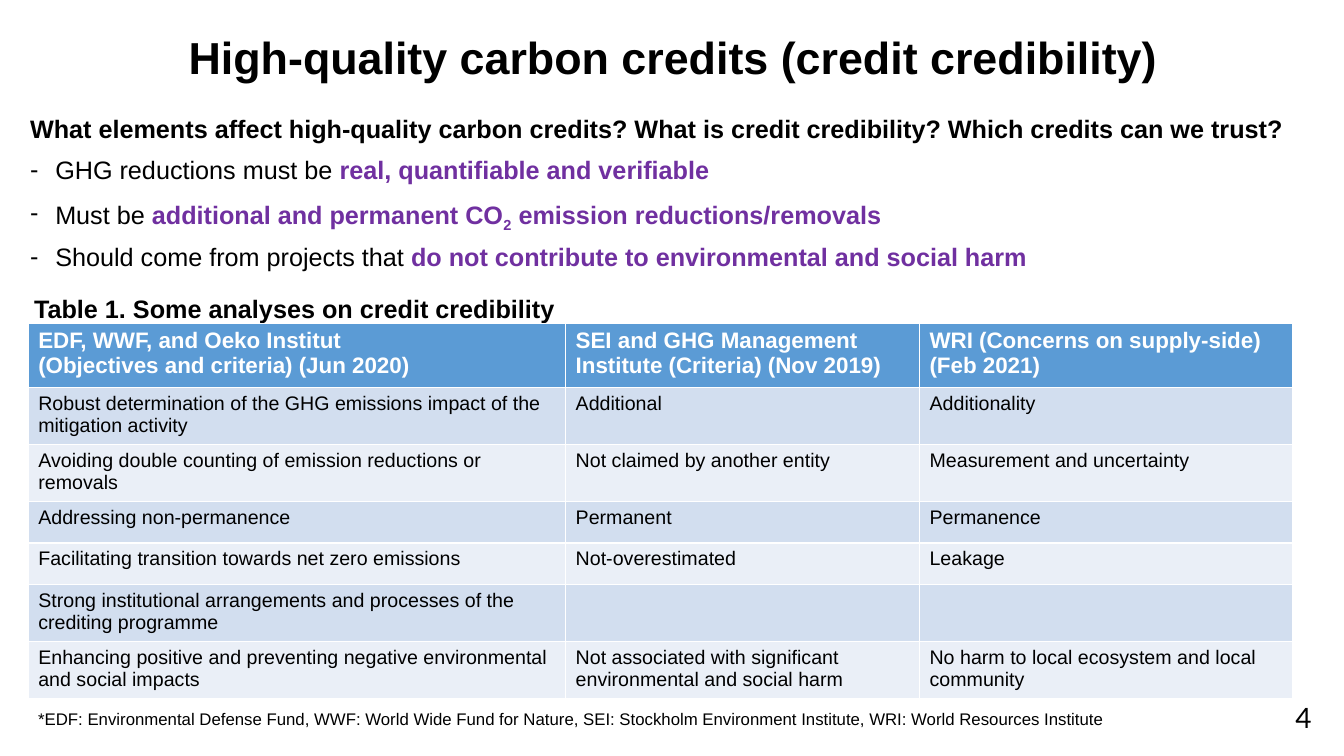
from lxml import etree
from pptx import Presentation
from pptx import util as u
from pptx.dml.color import RGBColor
from pptx.enum import text
from pptx.oxml.ns import qn

BLACK, WHITE, PURPLE = "000000", "FFFFFF", "7030A0"
HEADER_FILL, BAND_FILLS = "5B9BD5", ("D2DEEF", "EAEFF7")


def color(value):
    return RGBColor.from_string(value)


def add_run(paragraph, words, size, hex_color=BLACK, bold=False, name="Arial"):
    run = paragraph.add_run()
    run.text = words
    run.font.color.rgb = color(hex_color)
    for attribute, value in {"size": u.Pt(size), "bold": bold, "name": name}.items():
        setattr(run.font, attribute, value)
    return run


presentation = Presentation()
presentation.slide_width = u.Inches(13.33)
presentation.slide_height = u.Inches(7.5)
slide = presentation.slides.add_slide(presentation.slide_layouts[5])

title = slide.shapes.title
for attribute, value in {"left": 0.68, "top": 0.29, "width": 12, "height": 0.61}.items():
    setattr(title, attribute, u.Inches(value))
title.text_frame.vertical_anchor = text.MSO_ANCHOR.MIDDLE
title_paragraph = title.text_frame.paragraphs[0]
title_paragraph.alignment = text.PP_ALIGN.CENTER
title_paragraph.line_spacing = 0.9
add_run(title_paragraph, "High-quality carbon credits (credit credibility)", 32, bold=True)

labels = [
    ("4", (12.75, 6.9, 0.79, 0.44), {"size": 20, "name": "Lato"}),
    ("*EDF: Environmental Defense Fund, WWF: World Wide Fund for Nature, "
     "SEI: Stockholm Environment Institute, WRI: World Resources Institute",
     (0.28, 6.98, 11.02, 0.3), {"size": 12}),
    ("Table 1. Some analyses on credit credibility",
     (0.24, 2.86, 5.57, 0.4), {"size": 18, "bold": True}),
]
for words, place, style in labels:
    label = slide.shapes.add_textbox(*map(u.Inches, place))
    label.text_frame.word_wrap = True
    add_run(label.text_frame.paragraphs[0], words, **style)

criteria = slide.shapes.add_textbox(*map(u.Inches, (0.2, 1.11, 12.97, 1.72))).text_frame
criteria.word_wrap = True
question = criteria.paragraphs[0]
question.line_spacing = 0.9
add_run(question, "What elements affect high-quality carbon credits? What is credit "
        "credibility? Which credits can we trust?", 18, bold=True)

bullets = [
    ("GHG reductions must be ", ["real, quantifiable and verifiable"]),
    ("Must be ", ["additional and permanent CO", "2", " emission reductions/removals"]),
    ("Should come from projects that ",
     ["do not contribute to environmental and social harm"]),
]
for lead, highlights in bullets:
    paragraph = criteria.add_paragraph()
    properties = paragraph._p.get_or_add_pPr()
    properties.set("marL", str(u.Inches(0.25)))
    properties.set("indent", str(-u.Inches(0.25)))
    etree.SubElement(properties, qn("a:buFont"), typeface="Arial")
    etree.SubElement(properties, qn("a:buChar"), char="-")
    paragraph.line_spacing = 0.9
    paragraph.space_before = u.Pt(10)
    add_run(paragraph, lead, 18)
    for words in highlights:
        run = add_run(paragraph, words, 18, PURPLE, True)
        if words == "2":
            run.font._element.set("baseline", "-25000")

rows = [
    ("EDF, WWF, and Oeko Institut\n(Objectives and criteria) (Jun 2020)",
     "SEI and GHG Management Institute (Criteria) (Nov 2019)",
     "WRI (Concerns on supply-side)\n(Feb 2021)"),
    ("Robust determination of the GHG emissions impact of the mitigation activity",
     "Additional", "Additionality"),
    ("Avoiding double counting of emission reductions or removals",
     "Not claimed by another entity", "Measurement and uncertainty"),
    ("Addressing non-permanence", "Permanent", "Permanence"),
    ("Facilitating transition towards net zero emissions", "Not-overestimated", "Leakage"),
    ("Strong institutional arrangements and processes of the crediting programme", "", ""),
    ("Enhancing positive and preventing negative environmental and social impacts",
     "Not associated with significant environmental and social harm",
     "No harm to local ecosystem and local community"),
]
row_heights = [0.58, 0.54, 0.54, 0.41, 0.41, 0.54, 0.54]
column_widths = [5.33, 3.51, 3.7]
table = slide.shapes.add_table(
    len(rows), len(column_widths), u.Inches(0.28), u.Inches(3.21),
    u.Inches(sum(column_widths)), u.Inches(sum(row_heights))).table
for column, width in zip(table.columns, column_widths):
    column.width = u.Inches(width)
for row_index, (row, height) in enumerate(zip(rows, row_heights)):
    table.rows[row_index].height = u.Inches(height)
    is_header = row_index == 0
    style = (16, WHITE, True) if is_header else (14, BLACK, False)
    for column_index, words in enumerate(row):
        cell = table.cell(row_index, column_index)
        cell.fill.solid()
        cell.fill.fore_color.rgb = color(
            HEADER_FILL if is_header else BAND_FILLS[(row_index - 1) % 2])
        for line_index, line in enumerate(words.split("\n")):
            frame = cell.text_frame
            paragraph = frame.add_paragraph() if line_index else frame.paragraphs[0]
            if line:
                add_run(paragraph, line, *style)
            else:
                paragraph.font.size = u.Pt(14)

presentation.save("out.pptx")
